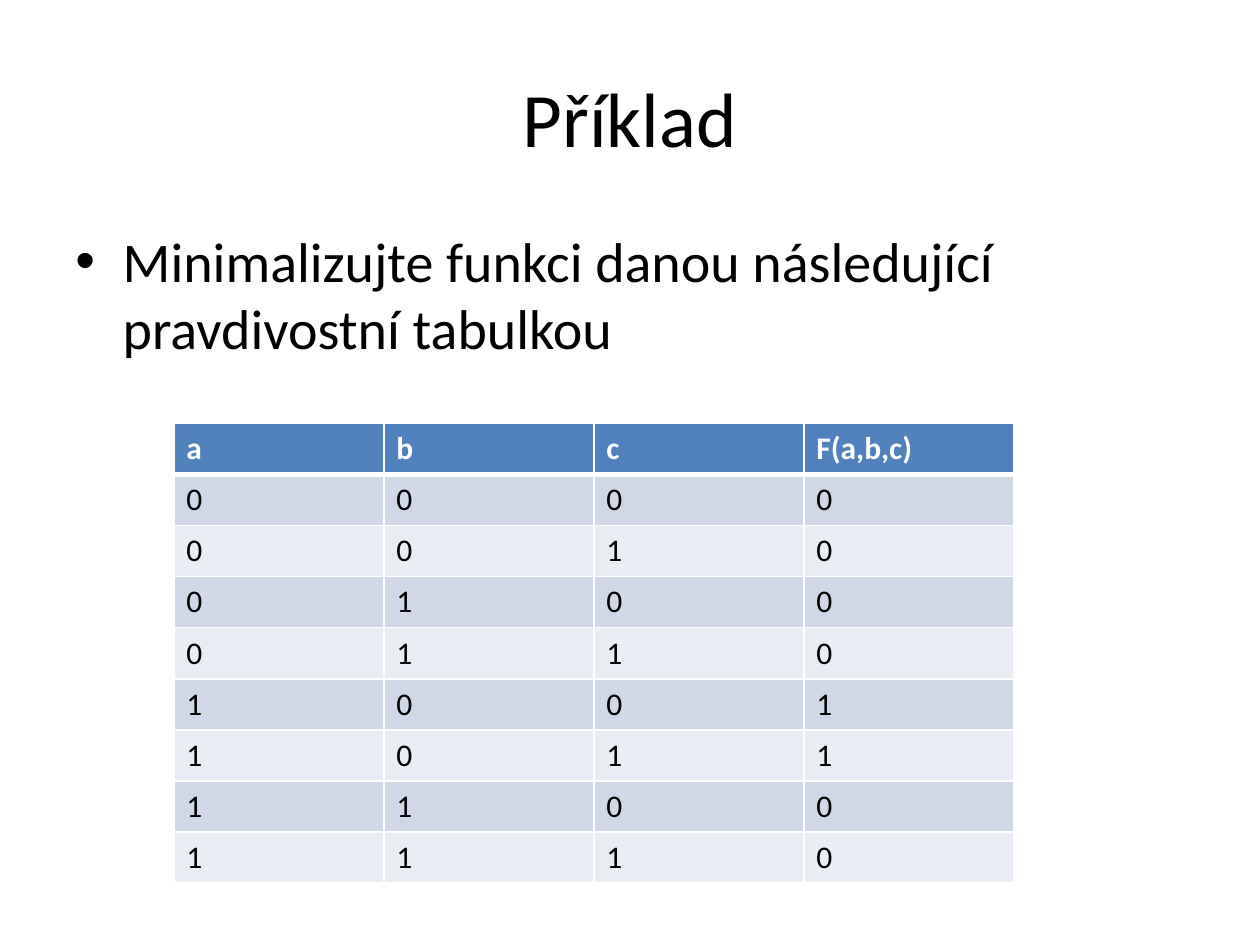
"""Build a slide with a truth table for a Boolean minimisation exercise."""
import itertools

import lxml.etree
import pptx
import pptx.dml.color
import pptx.enum.text
import pptx.oxml.ns
import pptx.util

qn = pptx.oxml.ns.qn
Pt = pptx.util.Pt


def add_run(p, text, size, color="000000", bold=False):
    r = p.add_run()
    r.text = text
    r.font.name = "Calibri"
    r.font.size = Pt(size)
    r.font.bold = bold
    r.font.color.rgb = pptx.dml.color.RGBColor.from_string(color)


def add_border(tcPr, side, width, color="FFFFFF"):
    ln = lxml.etree.SubElement(tcPr, qn(f"a:ln{side}"), w=str(Pt(width)))
    fill = lxml.etree.SubElement(ln, qn("a:solidFill"))
    lxml.etree.SubElement(fill, qn("a:srgbClr"), val=color)


prs = pptx.Presentation()
prs.slide_width = pptx.util.Inches(10)
prs.slide_height = pptx.util.Inches(7.5)
W, H = prs.slide_width, prs.slide_height
s = prs.slides.add_slide(prs.slide_layouts[6])

margin, width = int(W * 0.05), int(W * 0.9)
tf = s.shapes.add_textbox(margin, int(H * 0.04), width, int(H / 6)).text_frame
tf.word_wrap = True
tf.vertical_anchor = pptx.enum.text.MSO_ANCHOR.MIDDLE
p = tf.paragraphs[0]
p.alignment = pptx.enum.text.PP_ALIGN.CENTER
add_run(p, "Příklad", 44)

tf = s.shapes.add_textbox(margin, int(H * 7 / 30), width, int(H * 0.66)).text_frame
tf.word_wrap = True
p = tf.paragraphs[0]
p.space_before = Pt(6.4)
pPr = p._p.get_or_add_pPr()
pPr.set("marL", str(Pt(27)))
pPr.set("indent", str(Pt(-27)))
lxml.etree.SubElement(pPr, qn("a:buFont"), typeface="Arial")
lxml.etree.SubElement(pPr, qn("a:buChar"), char="•")
add_run(p, "Minimalizujte funkci danou následující pravdivostní tabulkou", 32)

rows = [("a", "b", "c", "F(a,b,c)")]
for a, b, c in itertools.product((0, 1), repeat=3):
    rows.append((a, b, c, int(a and not b)))

table = s.shapes.add_table(
    len(rows), len(rows[0]), int(W * 0.138), int(H * 0.448), int(W * 2 / 3), int(H * 0.487)
).table
for i, values in enumerate(rows):
    header = i == 0
    for j, value in enumerate(values):
        cell = table.cell(i, j)
        tcPr = cell._tc.get_or_add_tcPr()
        for side in "LRTB":
            heavy = (i, side) in ((0, "B"), (1, "T"))
            add_border(tcPr, side, 3 if heavy else 1)
        cell.fill.solid()
        color = "4F81BD" if header else ("E9EDF4", "D0D8E8")[i % 2]
        cell.fill.fore_color.rgb = pptx.dml.color.RGBColor.from_string(color)
        p = cell.text_frame.paragraphs[0]
        add_run(p, str(value), 18, "FFFFFF" if header else "000000", header)

prs.save("out.pptx")
